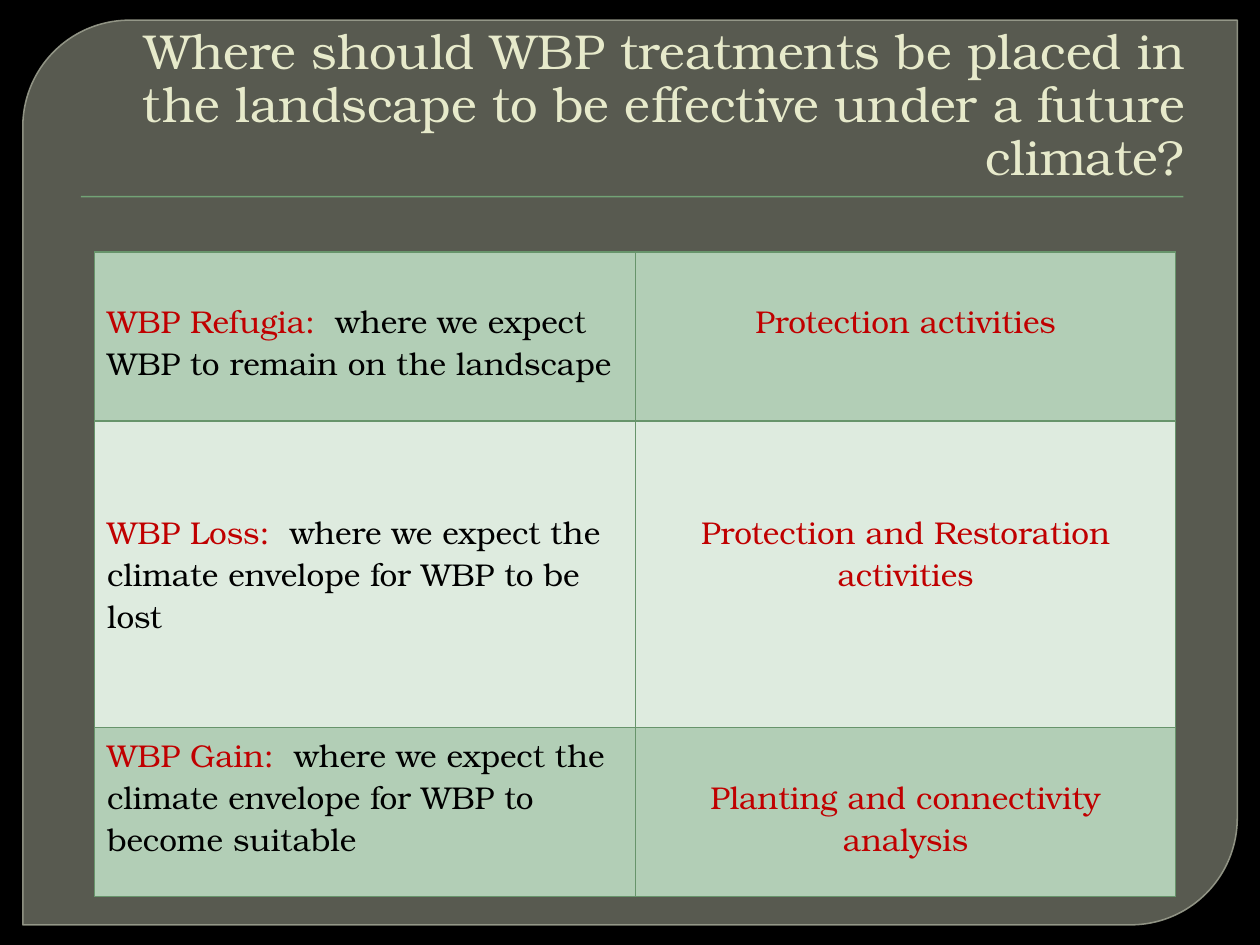
from dataclasses import dataclass

from lxml.etree import SubElement
from pptx import Presentation
from pptx.dml.color import RGBColor
from pptx.enum.shapes import MSO_SHAPE
from pptx.enum.text import MSO_ANCHOR, MSO_AUTO_SIZE, PP_ALIGN
from pptx.oxml.ns import qn
from pptx.util import Pt

FONT = "TeX Gyre Bonum"
BLACK = RGBColor(0x00, 0x00, 0x00)
PANEL = RGBColor(0x88, 0x8B, 0x7B)
PANEL_EDGE = RGBColor(0x9D, 0xA0, 0x90)
RULE = RGBColor(0x72, 0xA3, 0x76)
TITLE = RGBColor(0xE7, 0xEA, 0xCB)
RED = RGBColor(0xC0, 0x00, 0x00)
BAND_DARK = RGBColor(0xB2, 0xCE, 0xB6)
BAND_LIGHT = RGBColor(0xDE, 0xEB, 0xDF)
BORDER = RGBColor(0x67, 0x94, 0x6B)
LINE_HEIGHT = 24
CELL_MARGIN = 3.6


@dataclass
class Treatment:
    zone: str
    expectation: str
    activity: str
    height: float
    zone_offset: int
    activity_offset: int
    fill: RGBColor


TREATMENTS = [
    Treatment("WBP Refugia:  ", "where we expect WBP to remain on the landscape",
              "Protection activities", 96.6, 1, 1, BAND_DARK),
    Treatment("WBP Loss:  ", "where we expect the climate envelope for WBP to be lost",
              "Protection and Restoration activities", 175, 2, 2, BAND_LIGHT),
    Treatment("WBP Gain:  ", "where we expect the climate envelope for WBP to become suitable",
              "Planting and connectivity analysis", 96.6, 0, 1, BAND_DARK),
]


def set_opacity(fill_parent, percent: int) -> None:
    color = fill_parent.find(qn("a:solidFill")).find(qn("a:srgbClr"))
    SubElement(color, qn("a:alpha")).set("val", str(percent * 1000))


def add_run(paragraph, text: str, size: float, color: RGBColor) -> None:
    run = paragraph.add_run()
    run.text = text
    run.font.name = FONT
    run.font.size = Pt(size)
    run.font.color.rgb = color


def add_panel(slide) -> None:
    panel = slide.shapes.add_shape(
        MSO_SHAPE.ROUND_2_DIAG_RECTANGLE, Pt(13), Pt(11.5), Pt(694), Pt(517))
    panel.adjustments[0] = 0.118
    panel.adjustments[1] = 0
    panel.shadow.inherit = False
    panel.fill.solid()
    panel.fill.fore_color.rgb = PANEL
    panel.line.color.rgb = PANEL_EDGE
    panel.line.width = Pt(0.87)
    properties = panel._element.spPr
    set_opacity(properties, 65)
    set_opacity(properties.find(qn("a:ln")), 88)


def add_rule(slide) -> None:
    rule = slide.shapes.add_shape(
        MSO_SHAPE.RECTANGLE, Pt(46.2), Pt(112), Pt(630), Pt(0.8))
    rule.shadow.inherit = False
    rule.fill.solid()
    rule.fill.fore_color.rgb = RULE
    rule.line.fill.background()


def place_title(slide, text: str) -> None:
    title = slide.shapes.title
    title.left, title.top, title.width, title.height = Pt(36), Pt(20), Pt(648), Pt(90)
    slide.shapes._spTree.append(title._element)
    frame = title.text_frame
    frame.word_wrap = True
    frame.auto_size = MSO_AUTO_SIZE.NONE
    frame.vertical_anchor = MSO_ANCHOR.BOTTOM
    paragraph = frame.paragraphs[0]
    paragraph.alignment = PP_ALIGN.RIGHT
    paragraph.line_spacing = 0.9
    add_run(paragraph, text, 28, TITLE)


def format_cell(cell, fill: RGBColor, offset: int) -> None:
    cell.margin_top = Pt(CELL_MARGIN + offset * LINE_HEIGHT)
    cell.vertical_anchor = MSO_ANCHOR.TOP
    properties = cell._tc.get_or_add_tcPr()
    for side in ("lnL", "lnR", "lnT", "lnB"):
        border = SubElement(properties, qn(f"a:{side}"), w=str(Pt(0.75)))
        solid = SubElement(border, qn("a:solidFill"))
        SubElement(solid, qn("a:srgbClr"), val=str(BORDER))
    cell.fill.solid()
    cell.fill.fore_color.rgb = fill


def add_treatment_table(slide, treatments: list[Treatment]) -> None:
    height = sum(treatment.height for treatment in treatments)
    table = slide.shapes.add_table(
        len(treatments), 2, Pt(54), Pt(144), Pt(618), Pt(height)).table
    table.first_row = False
    table.horz_banding = False
    for row, treatment in zip(table.rows, treatments):
        row.height = Pt(treatment.height)
        zone_cell, activity_cell = row.cells
        format_cell(zone_cell, treatment.fill, treatment.zone_offset)
        format_cell(activity_cell, treatment.fill, treatment.activity_offset)
        zone = zone_cell.text_frame.paragraphs[0]
        add_run(zone, treatment.zone, 18, RED)
        add_run(zone, treatment.expectation, 18, BLACK)
        activity = activity_cell.text_frame.paragraphs[0]
        activity.alignment = PP_ALIGN.CENTER
        add_run(activity, treatment.activity, 18, RED)


def main() -> None:
    presentation = Presentation()
    presentation.slide_width = Pt(720)
    presentation.slide_height = Pt(540)
    slide = presentation.slides.add_slide(presentation.slide_layouts[5])
    slide.background.fill.solid()
    slide.background.fill.fore_color.rgb = BLACK
    add_panel(slide)
    add_rule(slide)
    place_title(slide, "Where should WBP treatments be placed in the landscape "
                       "to be effective under a future climate?")
    add_treatment_table(slide, TREATMENTS)
    presentation.save("out.pptx")


if __name__ == "__main__":
    main()
